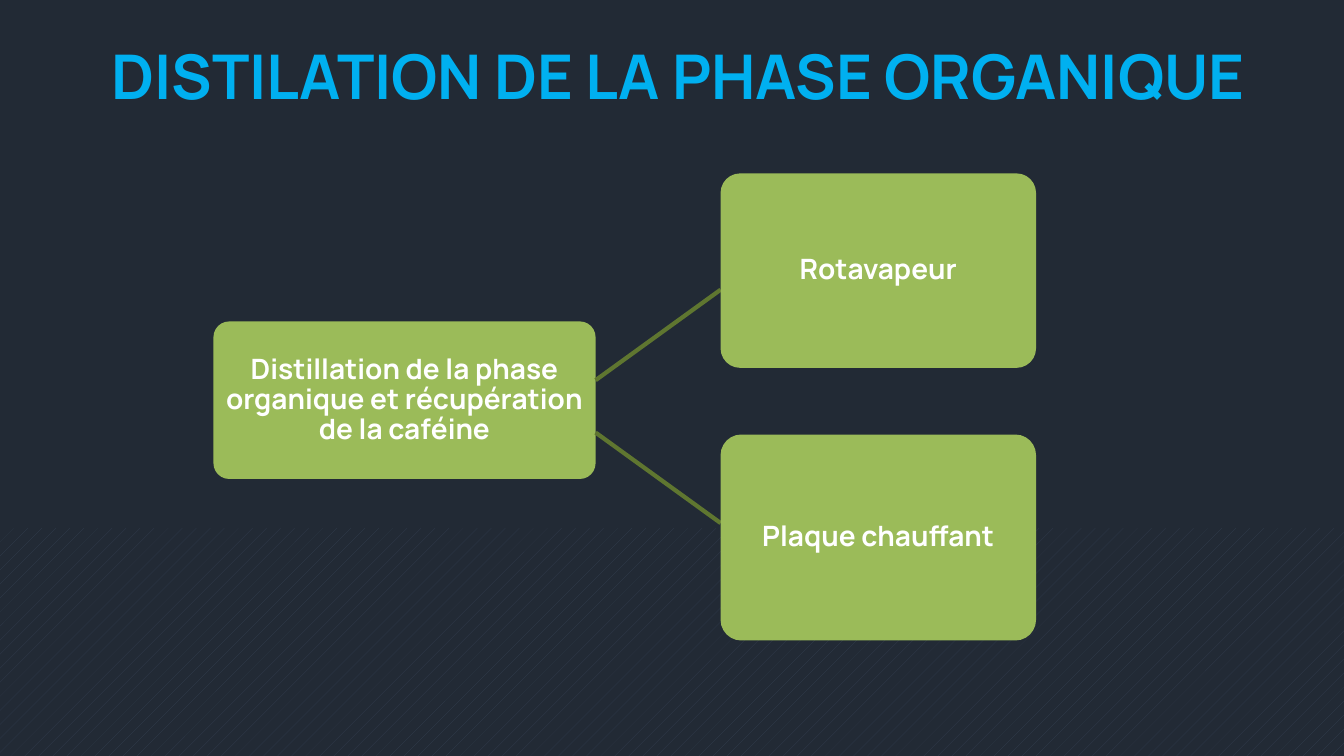
from lxml import etree
from pptx import Presentation
from pptx.dml.color import RGBColor
from pptx.enum.dml import MSO_PATTERN
from pptx.enum.shapes import MSO_CONNECTOR, MSO_SHAPE
from pptx.enum.text import MSO_ANCHOR, MSO_AUTO_SIZE, PP_ALIGN
from pptx.oxml.ns import qn
from pptx.util import Cm, Pt

RECTANGLE = MSO_SHAPE.RECTANGLE
ROUNDED = MSO_SHAPE.ROUNDED_RECTANGLE
STRAIGHT = MSO_CONNECTOR.STRAIGHT
DOTS = MSO_PATTERN.PERCENT_5
CENTER = PP_ALIGN.CENTER
TOP, MIDDLE = MSO_ANCHOR.TOP, MSO_ANCHOR.MIDDLE
NO_AUTOFIT = MSO_AUTO_SIZE.NONE

FONT = "Manrope"
NIGHT, SLATE = "222A35", "333F50"
SKY, GREEN, OLIVE, WHITE = "00B0F0", "9BBB59", "5F7630", "FFFFFF"
SLIDE_WIDTH, SLIDE_HEIGHT = 33.87, 19.05


def color(hex_code):
    return RGBColor.from_string(hex_code)


def write(frame, wording, size, hex_code, anchor):
    frame.text = wording
    frame.word_wrap = True
    frame.auto_size = NO_AUTOFIT
    frame.vertical_anchor = anchor
    paragraph = frame.paragraphs[0]
    paragraph.alignment = CENTER
    font = paragraph.runs[0].font
    font.name, font.size, font.bold = FONT, Pt(size), True
    font.color.rgb = color(hex_code)


def add_backdrop(slide, left, top, width, height):
    slide.background.fill.solid()
    slide.background.fill.fore_color.rgb = color(NIGHT)
    band = slide.shapes.add_shape(RECTANGLE, Cm(left), Cm(top), Cm(width), Cm(height))
    band.shadow.inherit = False
    band.line.fill.background()
    band.fill.patterned()
    band.fill.pattern = DOTS
    band.fill.fore_color.rgb = color(SLATE)
    band.fill.back_color.rgb = color(NIGHT)


def add_heading(slide, left, top, width, height, wording):
    heading = slide.shapes.title
    heading.left, heading.top = Cm(left), Cm(top)
    heading.width, heading.height = Cm(width), Cm(height)
    write(heading.text_frame, wording, 44, SKY, TOP)


def add_step(slide, left, top, width, height, wording):
    step = slide.shapes.add_shape(ROUNDED, Cm(left), Cm(top), Cm(width), Cm(height))
    step.shadow.inherit = False
    step.adjustments[0] = 0.1
    step.fill.solid()
    step.fill.fore_color.rgb = color(GREEN)
    step.line.fill.background()
    frame = step.text_frame
    write(frame, wording, 20, WHITE, MIDDLE)
    frame.margin_left = frame.margin_right = Cm(0.06)
    frame.margin_top = frame.margin_bottom = Cm(0.06)
    frame.paragraphs[0].line_spacing = 0.9


def add_link(slide, x1, y1, x2, y2):
    link = slide.shapes.add_connector(STRAIGHT, Cm(x1), Cm(y1), Cm(x2), Cm(y2))
    link.line.color.rgb = color(OLIVE)
    link.line.width = Pt(3)
    etree.SubElement(link._element.spPr, qn("a:effectLst"))


def add_method_tree(slide, left, top, width, height, process, methods):
    process_width, method_width = 9.63, 7.95
    upper_height, lower_height = 4.9, 5.19
    process_right = left + process_width
    method_left = left + width - method_width
    fork = top + 5.87
    add_step(slide, left, top + 3.73, process_width, 3.97, process)
    for direction in (-1, 1):
        add_link(slide, process_right, fork + direction * 0.66,
                 method_left, fork + direction * 2.94)
    upper, lower = methods
    add_step(slide, method_left, top, method_width, upper_height, upper)
    add_step(slide, method_left, top + height - lower_height,
             method_width, lower_height, lower)


def main():
    deck = Presentation()
    deck.slide_width, deck.slide_height = Cm(SLIDE_WIDTH), Cm(SLIDE_HEIGHT)
    slide = deck.slides.add_slide(deck.slide_layouts[5])
    add_backdrop(slide, 0, 13.31, SLIDE_WIDTH, 5.74)
    add_heading(slide, 1.47, 0.84, 31.27, 2.13, "DISTILATION DE LA PHASE ORGANIQUE")
    add_method_tree(slide, 5.38, 4.37, 20.73, 11.77,
                    "Distillation de la phase organique et récupération de la caféine",
                    ("Rotavapeur", "Plaque chauffant"))
    deck.save("out.pptx")


if __name__ == "__main__":
    main()
